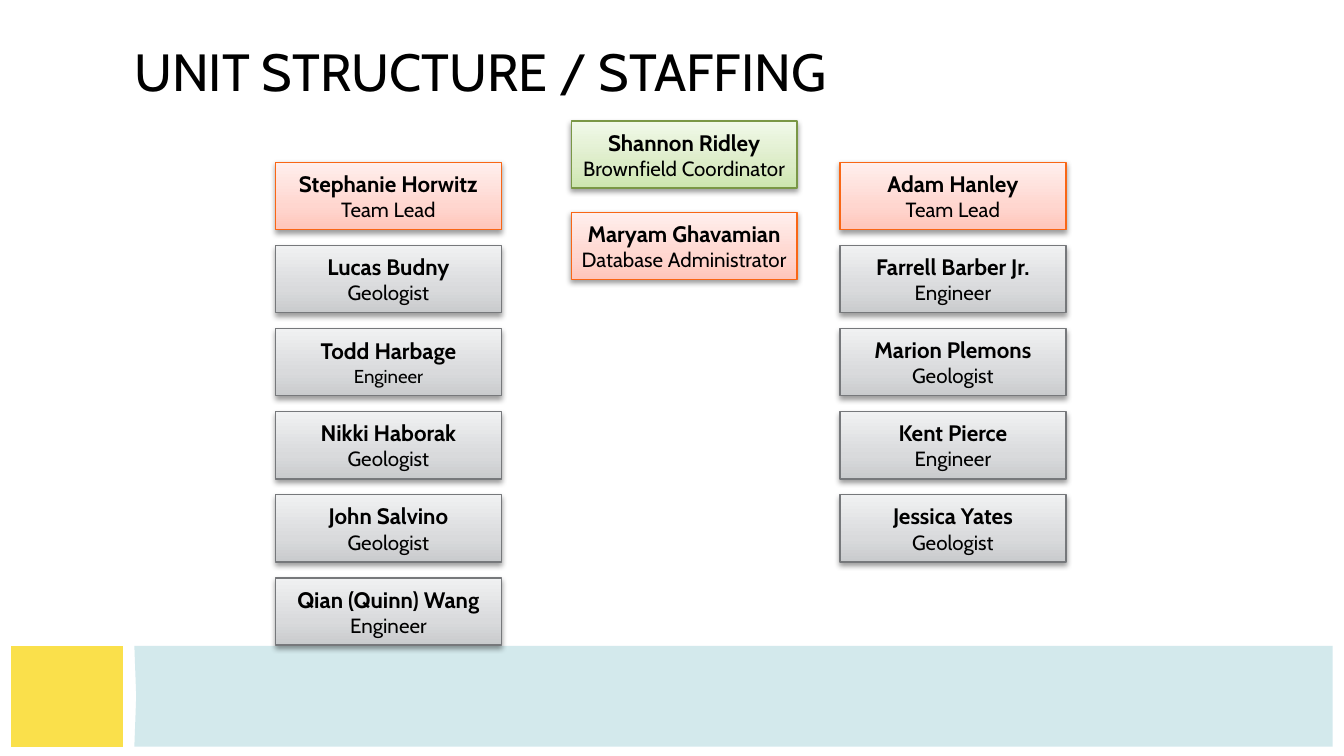
from copy import deepcopy

from pptx import Presentation
from pptx.dml.color import RGBColor
from pptx.enum.shapes import MSO_SHAPE
from pptx.enum.text import MSO_ANCHOR, PP_ALIGN
from pptx.oxml import parse_xml
from pptx.oxml.ns import nsdecls, qn
from pptx.util import Pt

FONT = "Cabin"
BLACK = RGBColor(0x00, 0x00, 0x00)
YELLOW = RGBColor(0xFA, 0xE0, 0x4B)
AQUA = RGBColor(0xC8, 0xE4, 0xE8)
GREEN = {
    "line": RGBColor(0x7A, 0x97, 0x46),
    "stops": (RGBColor(0xCD, 0xE6, 0xAF), RGBColor(0xDC, 0xEC, 0xC7), RGBColor(0xF1, 0xF9, 0xE9)),
}
ORANGE = {
    "line": RGBColor(0xF9, 0x66, 0x15),
    "stops": (RGBColor(0xFF, 0xC5, 0xBA), RGBColor(0xFF, 0xD6, 0xCF), RGBColor(0xFF, 0xEF, 0xED)),
}
GRAY = {
    "line": RGBColor(0x76, 0x78, 0x7B),
    "stops": (RGBColor(0xC9, 0xCB, 0xCD), RGBColor(0xD9, 0xDA, 0xDC), RGBColor(0xF0, 0xF1, 0xF2)),
}
STOP_POSITIONS = (0, 0.35, 1)
CARD_W, CARD_H = 121, 36

LEFT_TEAM = [
    ("Stephanie Horwitz", "Team Lead", ORANGE, 11),
    ("Lucas Budny", "Geologist", GRAY, 11),
    ("Todd Harbage", "Engineer", GRAY, 10),
    ("Nikki Haborak", "Geologist", GRAY, 11),
    ("John Salvino", "Geologist", GRAY, 11),
    ("Qian (Quinn) Wang", "Engineer", GRAY, 11),
]
CENTER_STAFF = [
    ("Shannon Ridley", "Brownfield Coordinator", GREEN, 11),
    ("Maryam Ghavamian", "Database Administrator", ORANGE, 11),
]
RIGHT_TEAM = [
    ("Adam Hanley", "Team Lead", ORANGE, 11),
    ("Farrell Barber Jr.", "Engineer", GRAY, 11),
    ("Marion Plemons", "Geologist", GRAY, 11),
    ("Kent Pierce", "Engineer", GRAY, 11),
    ("Jessica Yates", "Geologist", GRAY, 11),
]


def apply(obj, values):
    """Set each named attribute of an object."""
    for name, value in values.items():
        setattr(obj, name, value)


def add_run(p, text, size, bold=False):
    """Append a formatted run to a paragraph."""
    r = p.add_run()
    r.text = text
    apply(r.font, {"name": FONT, "size": Pt(size), "bold": bold})
    r.font.color.rgb = BLACK
    return r


def add_title(s, text, left, top, width, height):
    """Place the slide title in its placeholder."""
    sp = s.shapes.title
    apply(sp, {"left": Pt(left), "top": Pt(top), "width": Pt(width), "height": Pt(height)})
    apply(sp.text_frame, {"vertical_anchor": MSO_ANCHOR.MIDDLE, "word_wrap": True})
    p = sp.text_frame.paragraphs[0]
    p.alignment = PP_ALIGN.LEFT
    add_run(p, text, 28)


def add_block(s, points, color):
    """Draw a closed outline with a flat fill."""
    builder = s.shapes.build_freeform(*points[0], scale=Pt(1))
    builder.add_line_segments(points[1:], close=True)
    sp = builder.convert_to_shape()
    sp.shadow.inherit = False
    sp.fill.solid()
    sp.fill.fore_color.rgb = color
    sp.line.fill.background()
    return sp


def add_footer(s, left, top, width, height):
    """Draw the yellow block and the translucent band at the foot."""
    right, bottom = left + width, top + height
    band_left = left + 66.5
    add_block(s, [(left, bottom), (left, top), (left + 60, top), (left + 59.8, bottom)], YELLOW)
    band = add_block(
        s,
        [(band_left, bottom), (band_left + 0.3, top + height / 2), (band_left, top),
         (right, top), (right, bottom)],
        AQUA,
    )
    color = band._element.spPr.find(".//" + qn("a:srgbClr"))
    color.append(parse_xml(f'<a:alpha {nsdecls("a")} val="80000"/>'))


def add_shadow(sp):
    """Give a shape a soft shadow straight below."""
    sp.shadow.inherit = False
    sp._element.spPr.find(qn("a:effectLst")).append(parse_xml(
        f'<a:outerShdw {nsdecls("a")} blurRad="{Pt(3.1)}" dist="{Pt(1.6)}" dir="5400000"'
        ' rotWithShape="0"><a:srgbClr val="000000"><a:alpha val="38000"/></a:srgbClr>'
        '</a:outerShdw>'))


def add_card(s, person, left, top):
    """Draw one staff card with a name over a role."""
    name, role, style, role_size = person
    sp = s.shapes.add_shape(MSO_SHAPE.RECTANGLE, Pt(left), Pt(top), Pt(CARD_W), Pt(CARD_H))
    sp.fill.gradient()
    sp.fill.gradient_angle = 90
    stops = sp._element.spPr.find(".//" + qn("a:gsLst"))
    stops.append(deepcopy(stops[-1]))
    for stop, position, color in zip(sp.fill.gradient_stops, STOP_POSITIONS, style["stops"]):
        stop.position = position
        stop.color.rgb = color
    sp.line.color.rgb = style["line"]
    sp.line.width = Pt(0.75)
    add_shadow(sp)

    tf = sp.text_frame
    apply(tf, {"word_wrap": True, "vertical_anchor": MSO_ANCHOR.MIDDLE})
    apply(tf, {f"margin_{side}": Pt(0.72) for side in ("left", "top", "right", "bottom")})
    p = tf.paragraphs[0]
    apply(p, {"alignment": PP_ALIGN.CENTER, "space_after": Pt(6)})
    r = add_run(p, name, 12, True)
    p.add_line_break()
    p._p[-1].append(deepcopy(r._r.rPr))
    add_run(p, role, role_size)


def add_column(s, people, left, top, pitch):
    """Stack staff cards at an even pitch."""
    for i, person in enumerate(people):
        add_card(s, person, left, top + i * pitch)


def main():
    """Build and save the staffing slide."""
    prs = Presentation()
    apply(prs, {"slide_width": Pt(720), "slide_height": Pt(405)})
    s = prs.slides.add_slide(prs.slide_layouts[5])
    add_footer(s, 6, 346.5, 708, 53)
    add_title(s, "UNIT STRUCTURE / STAFFING", 64.8, 21.6, 592, 32.4)
    add_column(s, CENTER_STAFF, 306, 64.8, 49)
    add_column(s, LEFT_TEAM, 147.6, 87.1, 44.5)
    add_column(s, RIGHT_TEAM, 450, 87.1, 44.5)
    prs.save("out.pptx")


if __name__ == "__main__":
    main()
